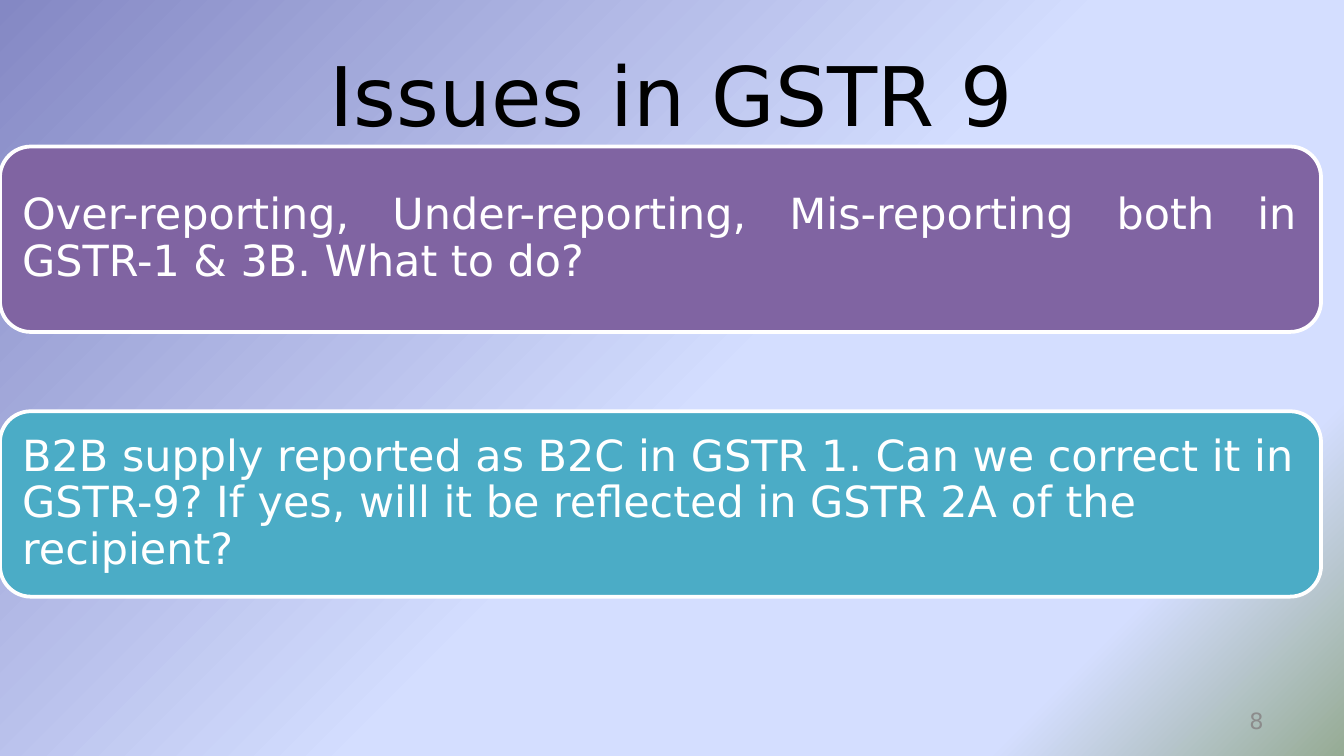
from copy import deepcopy

from pptx import Presentation
from pptx.dml.color import RGBColor
from pptx.enum.shapes import MSO_SHAPE
from pptx.enum.text import MSO_ANCHOR, PP_ALIGN
from pptx.oxml.ns import qn
from pptx.util import Inches, Pt

ROUND = MSO_SHAPE.ROUNDED_RECTANGLE
MIDDLE = MSO_ANCHOR.MIDDLE
LEFT, CENTER, RIGHT, JUSTIFY = (
    PP_ALIGN.LEFT, PP_ALIGN.CENTER, PP_ALIGN.RIGHT, PP_ALIGN.JUSTIFY)

BLACK = RGBColor(0x00, 0x00, 0x00)
WHITE = RGBColor(0xFF, 0xFF, 0xFF)
GRAY = RGBColor(0x8C, 0x8C, 0x8C)
PURPLE = RGBColor(0x80, 0x64, 0xA2)
TEAL = RGBColor(0x4B, 0xAC, 0xC6)
INDIGO = RGBColor(0x84, 0x88, 0xC4)
PALE = RGBColor(0xD4, 0xDE, 0xFF)
SAGE = RGBColor(0x96, 0xAB, 0x94)

FONT = "DejaVu Sans"
WIDTH = Inches(10)
HEIGHT = WIDTH * 9 // 16
STOPS = [(0, INDIGO), (0.53, PALE), (0.83, PALE), (1, SAGE)]
ISSUES = [
    ("Over-reporting, Under-reporting, Mis-reporting both in "
     "GSTR-1 & 3B. What to do?", PURPLE, JUSTIFY),
    ("B2B supply reported as B2C in GSTR 1. Can we correct it in GSTR-9? "
     "If yes, will it be reflected in GSTR 2A of the recipient?", TEAL, LEFT),
]


def apply(target, values):
    for name, value in values.items():
        setattr(target, name, value)


def write(shape, text, size, color, align, spacing=1.0, inset=0.1):
    frame = shape.text_frame
    apply(frame, {
        "word_wrap": True, "vertical_anchor": MIDDLE,
        "margin_left": Inches(0.1), "margin_right": Inches(0.1),
        "margin_top": Inches(inset), "margin_bottom": Inches(inset)})
    para = frame.paragraphs[0]
    apply(para, {"alignment": align, "line_spacing": spacing})
    run = para.add_run()
    run.text = text
    apply(run.font, {"name": FONT, "size": Pt(size)})
    run.font.color.rgb = color


def paint(slide):
    fill = slide.background.fill
    fill.gradient()
    fill.gradient_angle = 315
    group = slide.element.find(".//" + qn("a:gsLst"))
    while len(group) < len(STOPS):
        group.append(deepcopy(group[0]))
    for stop, (place, color) in zip(fill.gradient_stops, STOPS):
        stop.position = place
        stop.color.rgb = color


def add_label(slide, box, text, size, color, align):
    label = slide.shapes.add_textbox(*map(Inches, box))
    write(label, text, size, color, align, inset=0.05)


def add_issues(slide, box):
    left, top, width, height = box
    card = 1.38
    step = (height - card) / (len(ISSUES) - 1)
    for i, (text, color, align) in enumerate(ISSUES):
        place = (left, top + i * step, width, card)
        shape = slide.shapes.add_shape(ROUND, *map(Inches, place))
        shape.shadow.inherit = False
        shape.fill.solid()
        shape.fill.fore_color.rgb = color
        shape.line.color.rgb = WHITE
        shape.line.width = Pt(2)
        write(shape, text, 23, WHITE, align, spacing=0.9)


def main():
    deck = Presentation()
    apply(deck, {"slide_width": WIDTH, "slide_height": HEIGHT})
    slide = deck.slides.add_slide(deck.slide_layouts[6])
    paint(slide)
    add_label(slide, (0.5, 0.23, 9, 0.94), "Issues in GSTR 9", 44, BLACK, CENTER)
    add_label(slide, (7.17, 5.21, 2.33, 0.3), "8", 12, GRAY, RIGHT)
    add_issues(slide, (0, 1.09, 9.83, 3.35))
    deck.save("out.pptx")


if __name__ == "__main__":
    main()
